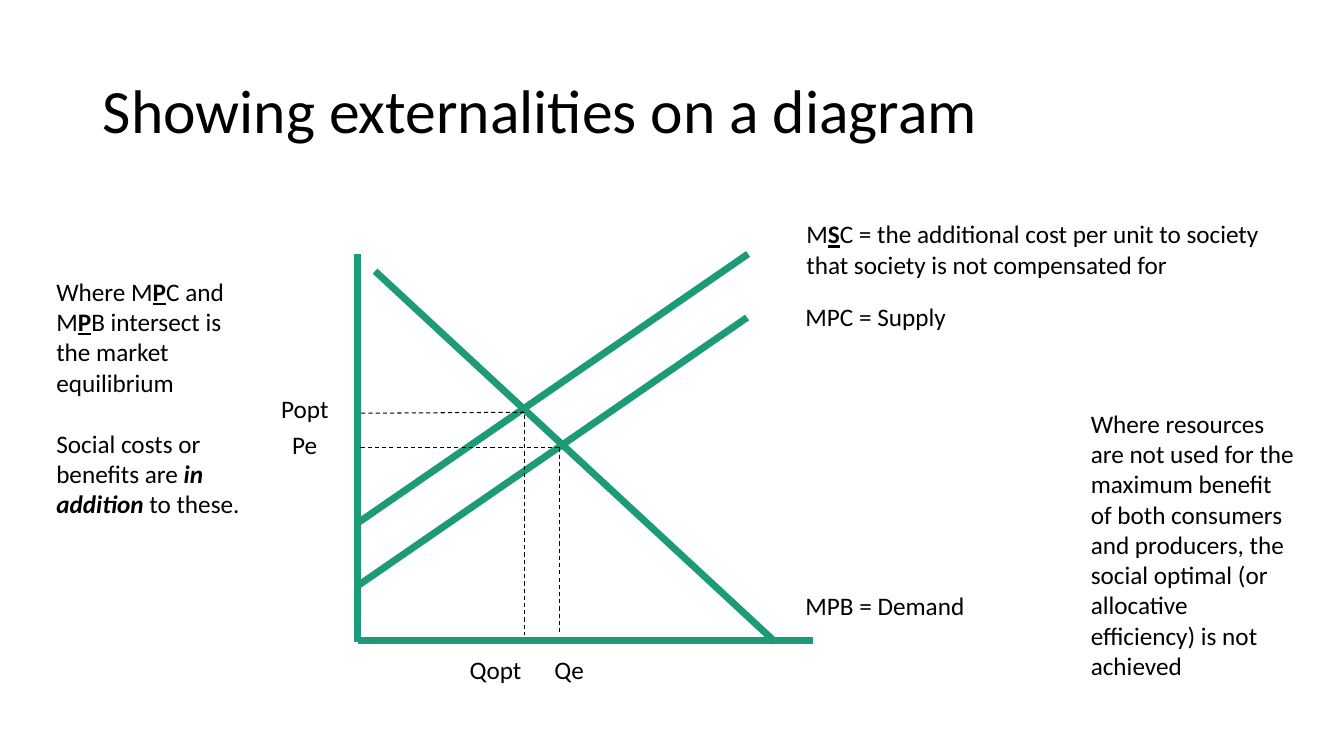
from lxml import etree
from pptx import Presentation
from pptx.dml.color import RGBColor
from pptx.enum.dml import MSO_LINE
from pptx.enum.shapes import MSO_CONNECTOR
from pptx.enum.text import MSO_ANCHOR, MSO_AUTO_SIZE, PP_ALIGN
from pptx.oxml.ns import qn
from pptx.util import Inches, Pt

GREEN = RGBColor(0x1D, 0x9A, 0x78)
BLACK = RGBColor(0, 0, 0)
FONT = "Calibri"
DASH = MSO_LINE.DASH
STRAIGHT = MSO_CONNECTOR.STRAIGHT
MIDDLE = MSO_ANCHOR.MIDDLE
LEFT = PP_ALIGN.LEFT
FIT_SHAPE = MSO_AUTO_SIZE.SHAPE_TO_FIT_TEXT
NO_FIT = MSO_AUTO_SIZE.NONE


def add_run(p, text, size=18, style=""):
    r = p.add_run()
    r.text = text
    r.font.name = FONT
    r.font.size = Pt(size)
    r.font.color.rgb = BLACK
    r.font.bold = "b" in style
    r.font.italic = "i" in style
    r.font.underline = "u" in style


def add_text(s, box, *paragraphs):
    sp = s.shapes.add_textbox(*map(Inches, box))
    tf = sp.text_frame
    tf.word_wrap = True
    tf.auto_size = FIT_SHAPE
    for i, runs in enumerate(paragraphs):
        p = tf.add_paragraph() if i else tf.paragraphs[0]
        if i:
            p.space_before = Pt(22)
        for text, style in runs:
            add_run(p, text, style=style)


def add_line(s, start, end, color, width, dash=None):
    line = s.shapes.add_connector(STRAIGHT, *map(Inches, start + end))
    line.line.color.rgb = color
    line.line.width = Pt(width)
    if dash:
        line.line.dash_style = dash
    etree.SubElement(line._element.spPr, qn("a:effectLst"))


def add_title(s, box):
    title = s.shapes.title
    title.left, title.top, title.width, title.height = map(Inches, box)
    tf = title.text_frame
    tf.word_wrap = True
    tf.auto_size = NO_FIT
    tf.vertical_anchor = MIDDLE
    p = tf.paragraphs[0]
    p.alignment = LEFT
    p.line_spacing = 0.9
    add_run(p, "Showing externalities on a diagram", 44)


def add_diagram(s, box):
    left, top, width, height = box

    def at(x, y):
        return left + x, top + y

    axes_and_curves = [
        ((0, 0), (0, height + 0.02)),
        ((width, height), (0, height)),
        ((3.86, 0.63), (0, 3.29)),
        ((0.17, 0.17), (4.14, height + 0.02)),
        ((3.87, 0), (0.01, 2.66)),
    ]
    for start, end in axes_and_curves:
        add_line(s, at(*start), at(*end), GREEN, 5)

    equilibria = [(2, 1.92, 1.92, 1.92), (1.65, 1.6, 1.57, 1.58)]
    for x, drop_y, price_y, axis_y in equilibria:
        add_line(s, at(x, drop_y), at(x, height - 0.05), BLACK, 0.75, DASH)
        add_line(s, at(x, price_y), at(0.02, axis_y), BLACK, 0.75, DASH)

    labels = [
        ("MPC = Supply", 4.34, 0.42, 1.81),
        ("MPB = Demand", 4.34, 3.29, 1.81),
        ("Qopt", 1.01, 3.92, 0.9),
        ("Qe", 1.85, 3.92, 0.6),
        ("Popt", -0.86, 1.33, 0.75),
        ("Pe", -0.75, 1.69, 0.6),
    ]
    for text, x, y, label_width in labels:
        add_text(s, (*at(x, y), label_width, 0.4), [(text, "")])

    add_text(s, (*at(4.35, -0.4), 4.97, 0.71), [
        ("M", ""),
        ("S", "bu"),
        ("C = the additional cost per unit to society "
         "that society is not compensated for", ""),
    ])


def add_equilibrium_note(s, box):
    add_text(s, box, [
        ("Where M", ""),
        ("P", "bu"),
        ("C and M", ""),
        ("P", "bu"),
        ("B intersect is the market equilibrium", ""),
    ], [
        ("Social costs or benefits are ", ""),
        ("in addition ", "bi"),
        ("to these.", ""),
    ])


def add_efficiency_note(s, box):
    add_text(s, box, [
        ("Where resources are not used for the maximum benefit of both "
         "consumers and producers, the social optimal (or allocative "
         "efficiency) is not achieved", ""),
    ])


def main():
    prs = Presentation()
    prs.slide_width = Inches(13.33)
    prs.slide_height = Inches(7.5)
    s = prs.slides.add_slide(prs.slide_layouts[5])
    add_title(s, (0.92, 0.4, 11.5, 1.45))
    add_diagram(s, (3.55, 2.52, 4.51, 3.83))
    add_equilibrium_note(s, (0.46, 2.69, 2.19, 2.83))
    add_efficiency_note(s, (10.72, 4, 2.22, 3.43))
    prs.save("out.pptx")


if __name__ == "__main__":
    main()
